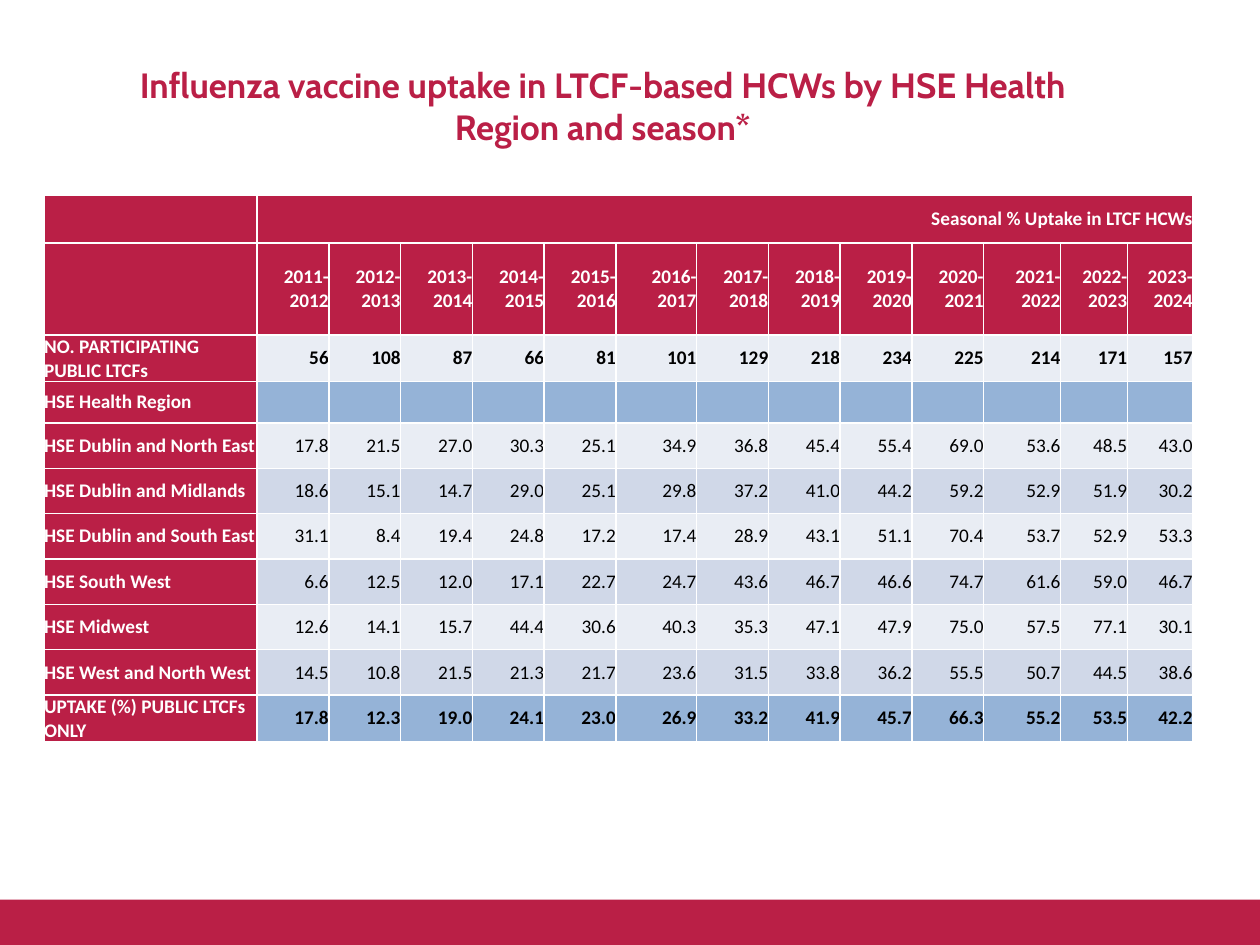
from lxml.etree import SubElement
from pptx import Presentation
from pptx.dml.color import RGBColor
from pptx.enum.shapes import MSO_SHAPE as Shape
from pptx.enum.text import MSO_ANCHOR as Anchor, PP_ALIGN as Align
from pptx.oxml.ns import qn
from pptx.util import Inches, Pt

# Content
TITLE = "Influenza vaccine uptake in LTCF-based HCWs by HSE Health Region and season*"
SPAN_HEADING = "Seasonal % Uptake in LTCF HCWs"
SEASONS = [f"{year}-{year + 1}" for year in range(2011, 2024)]

# Row label, row style, values by season
BODY = [
    ("NO. PARTICIPATING PUBLIC LTCFs", "count", "56 108 87 66 81 101 129 218 234 225 214 171 157"),
    ("HSE Health Region", "total", ""),
    ("HSE Dublin and North East", "light", "17.8 21.5 27.0 30.3 25.1 34.9 36.8 45.4 55.4 69.0 53.6 48.5 43.0"),
    ("HSE Dublin and Midlands", "dark", "18.6 15.1 14.7 29.0 25.1 29.8 37.2 41.0 44.2 59.2 52.9 51.9 30.2"),
    ("HSE Dublin and South East", "light", "31.1 8.4 19.4 24.8 17.2 17.4 28.9 43.1 51.1 70.4 53.7 52.9 53.3"),
    ("HSE South West", "dark", "6.6 12.5 12.0 17.1 22.7 24.7 43.6 46.7 46.6 74.7 61.6 59.0 46.7"),
    ("HSE Midwest", "light", "12.6 14.1 15.7 44.4 30.6 40.3 35.3 47.1 47.9 75.0 57.5 77.1 30.1"),
    ("HSE West and North West", "dark", "14.5 10.8 21.5 21.3 21.7 23.6 31.5 33.8 36.2 55.5 50.7 44.5 38.6"),
    ("UPTAKE (%) PUBLIC LTCFs ONLY", "total", "17.8 12.3 19.0 24.1 23.0 26.9 33.2 41.9 45.7 66.3 55.2 53.5 42.2"),
]

COLORS = {
    "crimson": "BA1F46",
    "white": "FFFFFF",
    "black": "000000",
    "light": "E9EDF4",
    "dark": "D0D8E8",
    "blue": "95B3D7",
}
# Row style: fill, text colour, bold
STYLES = {
    "header": ("crimson", "white", True),
    "count": ("light", "black", True),
    "light": ("light", "black", False),
    "dark": ("dark", "black", False),
    "total": ("blue", "black", True),
}
COLUMN_WIDTHS = [1.69] + [0.57] * 5 + [0.64] + [0.57] * 4 + [0.61, 0.53, 0.52]
ROW_HEIGHTS = [0.38, 0.73, 0.36, 0.33] + [0.36] * 7


def color(name):
    return RGBColor.from_string(COLORS[name])


def style_paragraph(paragraph, face, size, color_name, bold, align):
    paragraph.alignment = align
    font = paragraph.font
    font.name, font.size, font.bold = face, Pt(size), bold
    font.color.rgb = color(color_name)


def set_borders(cell, widths):
    properties = cell._tc.get_or_add_tcPr()
    for side, width in widths.items():
        line = SubElement(properties, qn(f"a:ln{side}"), w=str(Pt(width)))
        fill = SubElement(line, qn("a:solidFill"))
        SubElement(fill, qn("a:srgbClr"), val=COLORS["white"])


def fill_cell(cell, text, style, align, borders):
    fill_name, text_color, bold = STYLES[style]
    set_borders(cell, borders)
    cell.fill.solid()
    cell.fill.fore_color.rgb = color(fill_name)
    cell.margin_left = cell.margin_right = cell.margin_top = cell.margin_bottom = 0
    cell.vertical_anchor = Anchor.MIDDLE
    cell.text = text
    style_paragraph(cell.text_frame.paragraphs[0], "Calibri", 11, text_color, bold, align)


presentation = Presentation()
presentation.slide_width, presentation.slide_height = Inches(10), Inches(7.5)
slide = presentation.slides.add_slide(presentation.slide_layouts[6])

# Title
title = slide.shapes.add_textbox(Inches(0.83), Inches(0.29), Inches(7.91), Inches(1.09))
title_frame = title.text_frame
title_frame.word_wrap = True
title_frame.vertical_anchor = Anchor.MIDDLE
title_frame.text = TITLE
style_paragraph(title_frame.paragraphs[0], "Cabin", 20, "crimson", True, Align.CENTER)

# Footer band
footer = slide.shapes.add_shape(Shape.RECTANGLE, 0, Inches(7.14), Inches(10), Inches(0.36))
footer.shadow.inherit = False
footer.fill.solid()
footer.fill.fore_color.rgb = color("crimson")
footer.line.fill.background()

# Uptake table
rows = [("", "header", [SPAN_HEADING] + [""] * (len(SEASONS) - 1)), ("", "header", SEASONS)]
rows += [(label, style, values.split() or [""] * len(SEASONS)) for label, style, values in BODY]
table = slide.shapes.add_table(
    len(rows), len(COLUMN_WIDTHS), Inches(0.35), Inches(1.55),
    Inches(sum(COLUMN_WIDTHS)), Inches(sum(ROW_HEIGHTS)),
).table
table.first_row = table.horz_banding = False
for column, width in zip(table.columns, COLUMN_WIDTHS):
    column.width = Inches(width)
for row, height in zip(table.rows, ROW_HEIGHTS):
    row.height = Inches(height)

for row_index, (label, style, values) in enumerate(rows):
    borders = {"L": 1, "R": 1, "T": 1.5 if row_index == 1 else 1, "B": 1.5 if row_index == 0 else 1}
    fill_cell(table.cell(row_index, 0), label, "header", Align.LEFT, borders)
    for column_index, value in enumerate(values, start=1):
        fill_cell(table.cell(row_index, column_index), value, style, Align.RIGHT, borders)
table.cell(0, 1).merge(table.cell(0, len(SEASONS)))

presentation.save("out.pptx")
